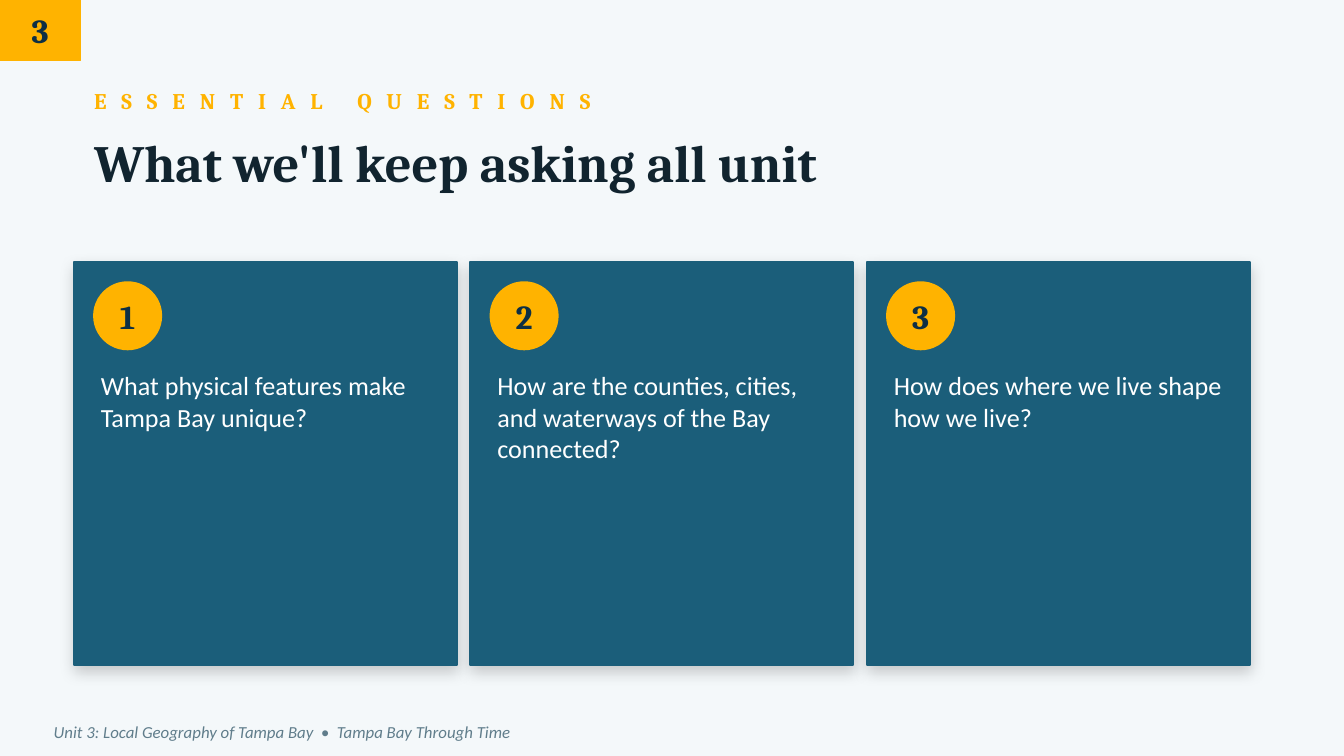
from dataclasses import dataclass, replace
from typing import Any

from lxml import etree
from pptx import Presentation
from pptx.dml.color import RGBColor
from pptx.enum.shapes import MSO_SHAPE
from pptx.enum.text import MSO_ANCHOR, PP_ALIGN
from pptx.oxml.ns import qn
from pptx.util import Inches, Pt

RECTANGLE, ELLIPSE = MSO_SHAPE.RECTANGLE, MSO_SHAPE.OVAL
TOP, MIDDLE = MSO_ANCHOR.TOP, MSO_ANCHOR.MIDDLE
LEFT, CENTER = PP_ALIGN.LEFT, PP_ALIGN.CENTER

SLIDE_WIDTH = Inches(10)
SLIDE_HEIGHT = SLIDE_WIDTH * 9 // 16
GRID_COLUMNS = 200
GRID_UNIT = SLIDE_WIDTH / GRID_COLUMNS

PALE, AMBER, TEAL = "F4F8FA", "FFB300", "1B5E7A"
NAVY, INK, WHITE, SLATE = "0E2F44", "11242F", "FFFFFF", "607D8B"


@dataclass(frozen=True)
class Area:
    column: float
    row: float
    columns: float
    rows: float

    def lengths(self) -> list[int]:
        cells = (self.column, self.row, self.columns, self.rows)
        return [round(cell * GRID_UNIT) for cell in cells]

    def shifted(self, columns: float) -> "Area":
        return replace(self, column=self.column + columns)


@dataclass(frozen=True)
class TextStyle:
    font: dict[str, Any]
    color: str
    align: Any = LEFT
    anchor: Any = MIDDLE
    spacing: int = 0


BADGE_STYLE = TextStyle({"name": "Cambria", "size": Pt(18), "bold": True}, NAVY, CENTER)
LABEL_STYLE = TextStyle({"name": "Cambria", "size": Pt(12), "bold": True}, AMBER, spacing=8)
TITLE_STYLE = TextStyle({"name": "Cambria", "size": Pt(28), "bold": True}, INK)
QUESTION_STYLE = TextStyle({"name": "Calibri", "size": Pt(14)}, WHITE, anchor=TOP)
FOOTER_STYLE = TextStyle({"name": "Calibri", "size": Pt(9), "italic": True}, SLATE)

PAGE_BADGE = Area(0, 0, 12, 9)
LABEL = Area(14, 11, 172, 8)
TITLE = Area(14, 19, 172, 10)
FOOTER = Area(8, 106.4, 184, 5)
CARD = Area(11, 39, 57, 60)
CARD_BADGE = Area(14, 42, 10, 10)
CARD_TEXT = Area(15, 55, 49, 41)
CARD_GAP = 2

QUESTIONS = [
    "What physical features make Tampa Bay unique?",
    "How are the counties, cities, and waterways of the Bay connected?",
    "How does where we live shape how we live?",
]


def paint(fill: Any, color: str) -> None:
    fill.solid()
    fill.fore_color.rgb = RGBColor.from_string(color)


def add_block(page: Any, kind: Any, area: Area, color: str) -> Any:
    block = page.shapes.add_shape(kind, *area.lengths())
    block.shadow.inherit = False
    paint(block.fill, color)
    paint(block.line.fill, color)
    block.line.width = Pt(1)
    return block


def add_shadow(block: Any) -> None:
    effects = block.element.spPr.find(qn("a:effectLst"))
    shadow = etree.SubElement(
        effects,
        qn("a:outerShdw"),
        blurRad=str(Pt(8)),
        dist=str(Pt(3)),
        dir=str(90 * 60000),
        algn="bl",
        rotWithShape="0",
    )
    color = etree.SubElement(shadow, qn("a:srgbClr"), val="000000")
    etree.SubElement(color, qn("a:alpha"), val="18000")


def add_text(page: Any, area: Area, text: str, style: TextStyle) -> None:
    frame = page.shapes.add_textbox(*area.lengths()).text_frame
    frame_format = {"word_wrap": True, "vertical_anchor": style.anchor}
    for side in ("left", "top", "right", "bottom"):
        frame_format[f"margin_{side}"] = 0
    for name, value in frame_format.items():
        setattr(frame, name, value)
    para = frame.paragraphs[0]
    para.alignment = style.align
    span = para.add_run()
    span.text = text
    for name, value in style.font.items():
        setattr(span.font, name, value)
    paint(span.font.fill, style.color)
    if style.spacing:
        span.font._element.set("spc", str(style.spacing * 100))


def add_badge(page: Any, kind: Any, area: Area, number: int) -> None:
    add_block(page, kind, area, AMBER)
    add_text(page, area, str(number), BADGE_STYLE)


def add_card(page: Any, index: int, question: str) -> None:
    shift = index * (CARD.columns + CARD_GAP)
    add_shadow(add_block(page, RECTANGLE, CARD.shifted(shift), TEAL))
    add_badge(page, ELLIPSE, CARD_BADGE.shifted(shift), index + 1)
    add_text(page, CARD_TEXT.shifted(shift), question, QUESTION_STYLE)


def main() -> None:
    deck = Presentation()
    deck.slide_width, deck.slide_height = SLIDE_WIDTH, SLIDE_HEIGHT
    page = deck.slides.add_slide(deck.slide_layouts[6])
    paint(page.background.fill, PALE)
    add_badge(page, RECTANGLE, PAGE_BADGE, 3)
    add_text(page, LABEL, "ESSENTIAL QUESTIONS", LABEL_STYLE)
    add_text(page, TITLE, "What we'll keep asking all unit", TITLE_STYLE)
    for index, question in enumerate(QUESTIONS):
        add_card(page, index, question)
    footer = "Unit 3: Local Geography of Tampa Bay  •  Tampa Bay Through Time"
    add_text(page, FOOTER, footer, FOOTER_STYLE)
    deck.save("out.pptx")


if __name__ == "__main__":
    main()
